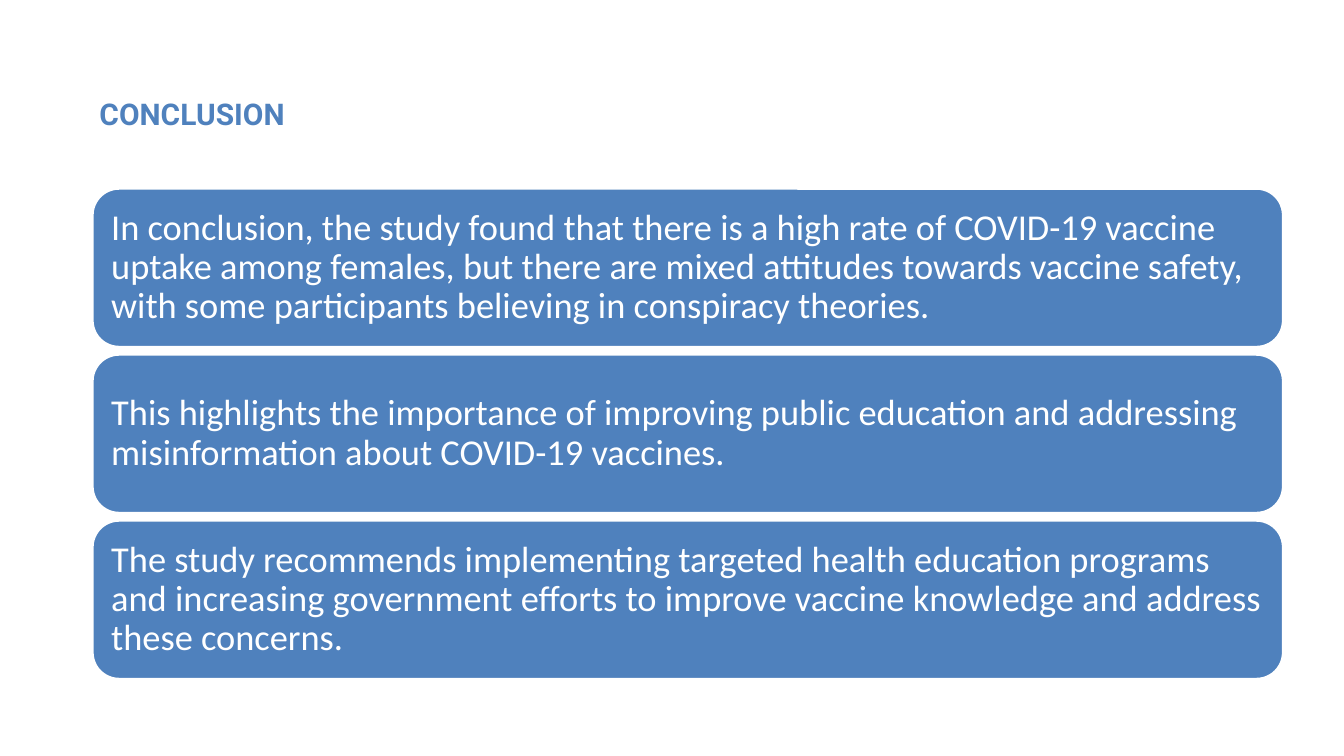
from pptx import Presentation
from pptx.dml.color import RGBColor
from pptx.enum.shapes import MSO_SHAPE as SHAPE
from pptx.enum.text import MSO_ANCHOR as ANCHOR, PP_ALIGN as ALIGN
from pptx.util import Inches, Pt

BLUE, WHITE = "4F81BD", "FFFFFF"
POINTS = [
    "In conclusion, the study found that there is a high rate of COVID-19 vaccine uptake among females, "
    "but there are mixed attitudes towards vaccine safety, with some participants believing in conspiracy theories.",
    "This highlights the importance of improving public education and addressing misinformation "
    "about COVID-19 vaccines.",
    "The study recommends implementing targeted health education programs and increasing government "
    "efforts to improve vaccine knowledge and address these concerns.",
]


def rgb(value):
    """Turn a hex string into a colour."""
    return RGBColor.from_string(value)


def set_text(sp, text, font, size, color, bold=False):
    """Write left-aligned, vertically centred text into a shape."""
    tf = sp.text_frame
    tf.text = text
    tf.word_wrap = True
    tf.vertical_anchor = ANCHOR.MIDDLE
    p = tf.paragraphs[0]
    p.alignment = ALIGN.LEFT
    f = p.runs[0].font
    f.name, f.size, f.bold = font, Pt(size), bold
    f.color.rgb = rgb(color)
    return tf


def place_title(s, text, left, top, width, height):
    """Move the title placeholder into its box and format it."""
    sp = s.shapes.title
    sp.left, sp.top = Inches(left), Inches(top)
    sp.width, sp.height = Inches(width), Inches(height)
    set_text(sp, text, "Roboto", 32, BLUE, bold=True)


def add_card(s, text, left, top, width, height):
    """Add one rounded card with its statement."""
    sp = s.shapes.add_shape(SHAPE.ROUNDED_RECTANGLE, Inches(left), Inches(top),
                            Inches(width), Inches(height))
    sp.shadow.inherit = False
    sp.fill.solid()
    sp.fill.fore_color.rgb = rgb(BLUE)
    sp.line.color.rgb = rgb(WHITE)
    sp.line.width = Pt(2)
    tf = set_text(sp, text, "Calibri", 39, WHITE)
    tf.margin_left = tf.margin_right = tf.margin_top = tf.margin_bottom = Inches(0.16)
    tf.paragraphs[0].line_spacing = 0.9


def add_card_stack(s, texts, left, top, width, height, gap=0.12):
    """Stack equal cards with equal gaps in the given box."""
    card_height = (height - gap * (len(texts) - 1)) / len(texts)
    for i, text in enumerate(texts):
        add_card(s, text, left, top + i * (card_height + gap), width, card_height)


def main():
    """Build the conclusion slide."""
    prs = Presentation()
    prs.slide_width, prs.slide_height = Inches(20), Inches(11.25)
    s = prs.slides.add_slide(prs.slide_layouts[5])
    place_title(s, "CONCLUSION", 1.38, 0.6, 17.25, 2.17)
    add_card_stack(s, POINTS, 1.38, 2.81, 17.71, 7.29)
    prs.save("out.pptx")


if __name__ == "__main__":
    main()
